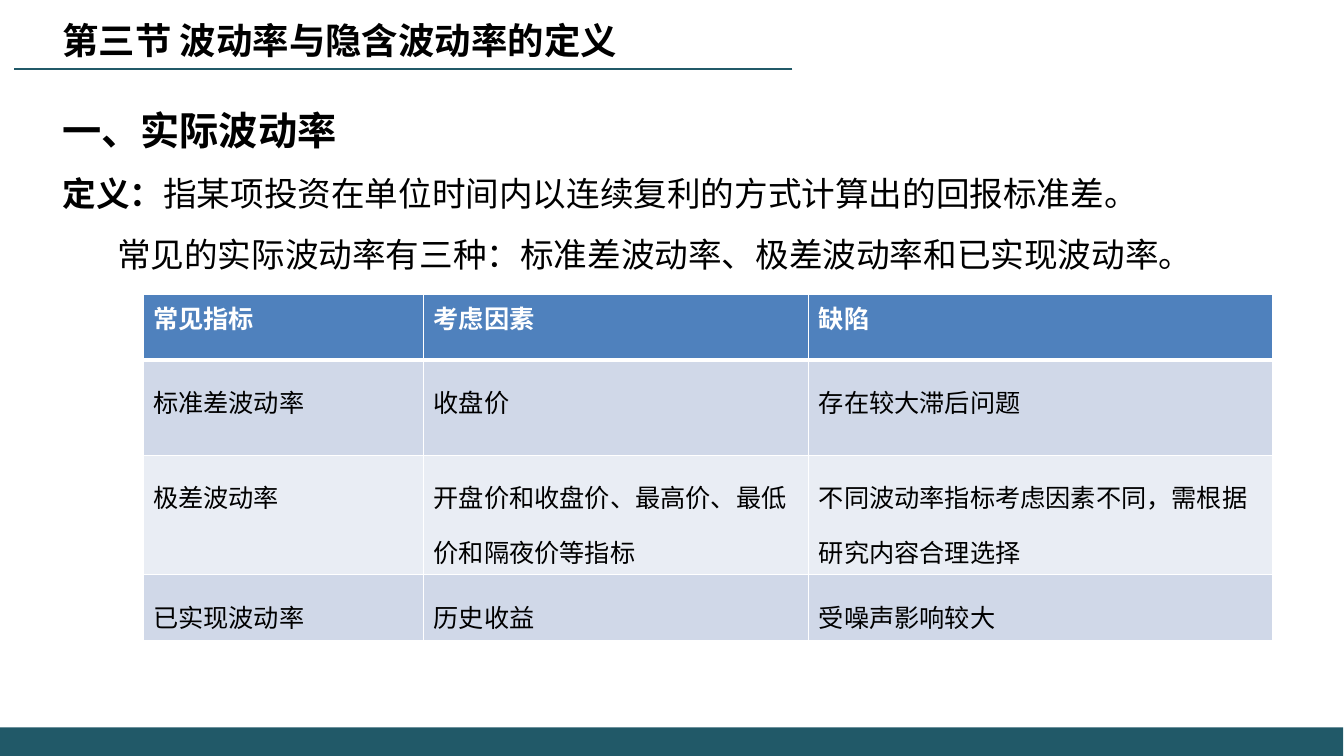
from lxml import etree
from pptx import Presentation
from pptx.dml.color import RGBColor
from pptx.enum.shapes import MSO_CONNECTOR, MSO_SHAPE
from pptx.enum.text import MSO_ANCHOR, MSO_AUTO_SIZE, PP_ALIGN
from pptx.oxml.ns import qn
from pptx.util import Pt

RECTANGLE = MSO_SHAPE.RECTANGLE
STRAIGHT = MSO_CONNECTOR.STRAIGHT
TOP, MIDDLE = MSO_ANCHOR.TOP, MSO_ANCHOR.MIDDLE
LEFT = PP_ALIGN.LEFT
NO_FIT = MSO_AUTO_SIZE.NONE

TEAL, BLACK, WHITE = "215968", "000000", "FFFFFF"
HEADER_FILL, ODD_FILL, EVEN_FILL = "4F81BD", "D0D8E8", "E9EDF4"
CHINESE_FONT = "Noto Sans CJK SC"


def color(value):
    return RGBColor.from_string(value)


def style_run(run, size, name, bold, value=BLACK):
    run.font.size = Pt(size)
    run.font.name = name
    run.font.bold = bold
    run.font.color.rgb = color(value)
    east_asian = etree.SubElement(run.font._element, qn("a:ea"))
    east_asian.set("typeface", CHINESE_FONT)


deck = Presentation()
deck.slide_width, deck.slide_height = Pt(960), Pt(540)
page = deck.slides.add_slide(deck.slide_layouts[1])
title, body = page.placeholders

footer = page.shapes.add_shape(RECTANGLE, 0, Pt(519.6), Pt(959.5), Pt(20.4))
footer.shadow.inherit = False
footer.fill.solid()
footer.fill.fore_color.rgb = color(TEAL)
footer.line.fill.background()

rule = page.shapes.add_connector(STRAIGHT, Pt(566), Pt(49), Pt(10), Pt(49))
rule.line.color.rgb = color(TEAL)
rule.line.width = Pt(1.5)
etree.SubElement(rule._element.spPr, qn("a:effectLst"))

title.left, title.top, title.width, title.height = Pt(37.4), Pt(9.4), Pt(415.4), Pt(38.9)
title.text_frame.text = "第三节 波动率与隐含波动率的定义"
title.text_frame.vertical_anchor = MIDDLE
title.text_frame.auto_size = NO_FIT
title.text_frame.paragraphs[0].alignment = LEFT
style_run(title.text_frame.paragraphs[0].runs[0], 26, CHINESE_FONT, True)

body.left, body.top, body.width, body.height = Pt(37.4), Pt(55.4), Pt(884), Pt(150)
body.text_frame.vertical_anchor = TOP
body.text_frame.auto_size = NO_FIT
body_lines = [
    (0, [("一、实际波动率", 28, True)]),
    (0, [("定义：", 24, True),
         ("指某项投资在单位时间内以连续复利的方式计算出的回报标准差。", 24, False)]),
    (39, [("常见的实际波动率有三种：标准差波动率、极差波动率和已实现波动率。", 24, False)]),
]
for index, (indent, pieces) in enumerate(body_lines):
    para = body.text_frame.paragraphs[0] if index == 0 else body.text_frame.add_paragraph()
    para.line_spacing = 1.5
    para.space_before = Pt(0)
    properties = para._p.get_or_add_pPr()
    properties.set("marL", "0")
    properties.set("indent", str(Pt(indent)))
    etree.SubElement(properties, qn("a:buNone"))
    for text, size, bold in pieces:
        span = para.add_run()
        span.text = text
        style_run(span, size, "Times New Roman", bold)

rows = [
    ("常见指标", "考虑因素", "缺陷"),
    ("标准差波动率", "收盘价", "存在较大滞后问题"),
    ("极差波动率", "开盘价和收盘价、最高价、最低价和隔夜价等指标",
     "不同波动率指标考虑因素不同，需根据研究内容合理选择"),
    ("已实现波动率", "历史收益", "受噪声影响较大"),
]
column_widths = [200.4, 275.2, 331.6]
row_heights = [46.5, 68.2, 80.2, 46.9]
frame = page.shapes.add_table(len(rows), len(column_widths), Pt(102.2), Pt(210.5),
                              Pt(sum(column_widths)), Pt(sum(row_heights)))
table = frame.table
for column, width in zip(table.columns, column_widths):
    column.width = Pt(width)
for row_index, (texts, height) in enumerate(zip(rows, row_heights)):
    table.rows[row_index].height = Pt(height)
    header = row_index == 0
    fill = HEADER_FILL if header else ODD_FILL if row_index % 2 else EVEN_FILL
    for column_index, text in enumerate(texts):
        cell = table.cell(row_index, column_index)
        cell.text_frame.text = text
        para = cell.text_frame.paragraphs[0]
        if not header:
            para.line_spacing = 1.5
        name = "Times New Roman" if column_index == 0 and not header else "Arial"
        style_run(para.runs[0], 18, name, header, WHITE if header else BLACK)
        properties = cell._tc.get_or_add_tcPr()
        for side in ("lnL", "lnR", "lnT", "lnB"):
            thick = (header and side == "lnB") or (row_index == 1 and side == "lnT")
            border = etree.SubElement(properties, qn(f"a:{side}"), w=str(Pt(3 if thick else 1)))
            border_fill = etree.SubElement(border, qn("a:solidFill"))
            etree.SubElement(border_fill, qn("a:srgbClr"), val=WHITE)
        cell.fill.solid()
        cell.fill.fore_color.rgb = color(fill)

deck.save("out.pptx")
